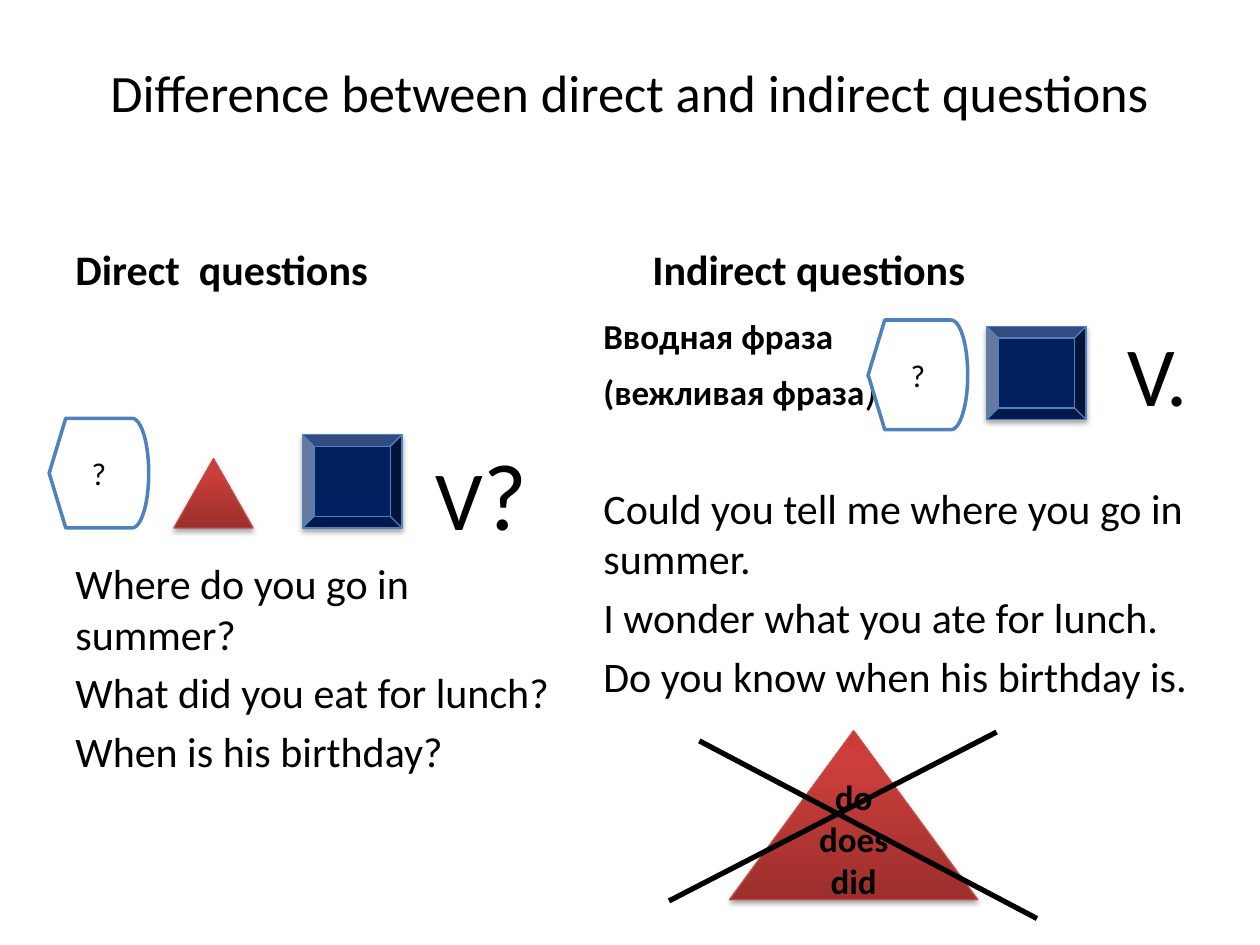
import pptx
import pptx.dml.color
import pptx.enum.shapes
import pptx.enum.text
import pptx.oxml
import pptx.oxml.ns
import pptx.util
from pptx.util import Inches

SHAPES = pptx.enum.shapes.MSO_SHAPE
ANCHOR = pptx.enum.text.MSO_ANCHOR
ALIGN = pptx.enum.text.PP_ALIGN
NAMESPACE = pptx.oxml.ns.nsdecls("a")
BLACK = "000000"
BLUE = "4F81BD"


def color(value):
    return pptx.dml.color.RGBColor.from_string(value)


def add_span(para, text, size, bold=False):
    span = para.add_run()
    span.text = text
    span.font.name = "Calibri"
    span.font.size = pptx.util.Pt(size)
    span.font.bold = bold
    span.font.color.rgb = color(BLACK)


def write_paragraphs(frame, paragraphs, align=ALIGN.LEFT, spacing=0.2):
    """Each paragraph is a list of (text, size, bold) spans; spacing is a share of the size."""
    for index, spans in enumerate(paragraphs):
        para = frame.add_paragraph() if index else frame.paragraphs[0]
        para.alignment = align
        para.space_before = pptx.util.Pt(spans[0][1] * spacing)
        for span in spans:
            add_span(para, *span)


def add_text(slide, left, top, width, height, paragraphs, anchor=ANCHOR.TOP):
    box = slide.shapes.add_textbox(Inches(left), Inches(top), Inches(width), Inches(height))
    frame = box.text_frame
    frame.word_wrap = True
    frame.vertical_anchor = anchor
    write_paragraphs(frame, paragraphs)
    return frame


def add_outlined_shape(slide, kind, left, top, width, height, line, line_width=0.75):
    shape = slide.shapes.add_shape(
        kind, Inches(left), Inches(top), Inches(width), Inches(height))
    shape.shadow.inherit = False
    shape.line.color.rgb = color(line)
    shape.line.width = pptx.util.Pt(line_width)
    return shape


def add_soft_shadow(shape):
    effects = shape.element.spPr.find(pptx.oxml.ns.qn("a:effectLst"))
    effects.append(pptx.oxml.parse_xml(
        f'<a:outerShdw {NAMESPACE} blurRad="40000" dist="23000" dir="5400000" rotWithShape="0">'
        f'<a:srgbClr val="{BLACK}"><a:alpha val="35000"/></a:srgbClr></a:outerShdw>'))


def add_question_word(slide, left, top):
    shape = add_outlined_shape(slide, SHAPES.FLOWCHART_DISPLAY, left, top, 0.79, 0.87, BLUE, 2)
    shape.fill.solid()
    shape.fill.fore_color.rgb = color("FFFFFF")
    shape.text_frame.vertical_anchor = ANCHOR.MIDDLE
    write_paragraphs(shape.text_frame, [[("?", 18)]], ALIGN.CENTER, 0)


def add_subject(slide, left, top):
    shape = add_outlined_shape(slide, SHAPES.BEVEL, left, top, 0.79, 0.74, BLUE)
    shape.fill.solid()
    shape.fill.fore_color.rgb = color("002060")
    add_soft_shadow(shape)


def add_auxiliary(slide, left, top, width, height):
    shape = add_outlined_shape(
        slide, SHAPES.ISOSCELES_TRIANGLE, left, top, width, height, "BF4C48")
    stops = "".join(
        f'<a:gs pos="{position * 1000}"><a:srgbClr val="{value}"/></a:gs>'
        for position, value in ((0, "9C2F2D"), (80, "CB3E3A"), (100, "CE3B37")))
    geometry = shape.element.spPr.find(pptx.oxml.ns.qn("a:prstGeom"))
    geometry.addnext(pptx.oxml.parse_xml(
        f'<a:gradFill {NAMESPACE} rotWithShape="1"><a:gsLst>{stops}</a:gsLst>'
        '<a:lin ang="16200000" scaled="0"/></a:gradFill>'))
    add_soft_shadow(shape)
    return shape


def add_stroke(slide, start, end):
    points = [Inches(value) for value in (*start, *end)]
    stroke = slide.shapes.add_connector(pptx.enum.shapes.MSO_CONNECTOR.STRAIGHT, *points)
    stroke.line.color.rgb = color(BLACK)
    stroke.line.width = pptx.util.Pt(3)
    stroke.element.spPr.append(pptx.oxml.parse_xml(f"<a:effectLst {NAMESPACE}/>"))


def add_title(slide, text):
    title = slide.shapes.title
    title.left, title.top = Inches(0.5), Inches(0.3)
    title.width, title.height = Inches(9), Inches(0.85)
    title.text_frame.vertical_anchor = ANCHOR.MIDDLE
    write_paragraphs(title.text_frame, [[(text, 30)]], ALIGN.CENTER, 0)


def add_direct_column(slide):
    add_text(slide, 0.5, 1.78, 3.71, 0.6, [[("Direct  questions", 24, True)]], ANCHOR.BOTTOM)
    frame = add_text(slide, 0.5, 2.38, 4.19, 4.32, [
        [("V", 48), ("?", 54)],
        [("Where do you go in summer?", 24)],
        [("What did you eat for lunch?", 24)],
        [("When is his birthday?", 24)],
    ])
    # Room above the text, and an indent that puts the verb after the symbols
    frame.margin_top = Inches(1.08)
    frame.margin_right = Inches(0.2)
    frame.paragraphs[0].space_before = pptx.util.Pt(0)
    properties = frame.paragraphs[0]._p.get_or_add_pPr()
    properties.set("marL", str(Inches(2.86)))
    properties.set("indent", "0")
    add_question_word(slide, 0.39, 3.32)
    add_auxiliary(slide, 1.38, 3.64, 0.63, 0.55)
    add_subject(slide, 2.4, 3.45)


def add_indirect_column(slide):
    add_text(slide, 5.08, 1.68, 4.42, 0.7, [[("Indirect questions", 24, True)]], ANCHOR.BOTTOM)
    frame = add_text(slide, 4.69, 2.45, 5.12, 4.76, [
        [("Вводная фраза", 20, True)],
        [("(вежливая фраза", 20, True), (")", 24)],
        [("Could you tell me where you go in summer.", 24)],
        [("I wonder what you ate for lunch.", 24)],
        [("Do you know when his birthday is.", 24)],
    ])
    frame.paragraphs[2].space_before = pptx.util.Pt(39)
    add_question_word(slide, 6.89, 2.54)
    add_subject(slide, 7.83, 2.59)
    add_text(slide, 8.85, 2.51, 0.94, 0.91, [[("V.", 48)]]).paragraphs[0].space_before = 0


def add_crossed_out_auxiliaries(slide):
    frame = add_auxiliary(slide, 5.79, 5.8, 1.97, 1.34).text_frame
    frame.vertical_anchor = ANCHOR.MIDDLE
    frame.margin_bottom = Inches(0.35)
    words = [[(word, 20, True)] for word in ("do", "does", "did")]
    write_paragraphs(frame, words, ALIGN.CENTER, 0)
    add_stroke(slide, (7.91, 5.81), (5.31, 7.15))
    add_stroke(slide, (5.55, 5.88), (8.23, 7.29))


def main():
    deck = pptx.Presentation()
    deck.slide_width, deck.slide_height = Inches(10), Inches(7.5)
    slide = deck.slides.add_slide(deck.slide_layouts.get_by_name("Title Only"))
    add_title(slide, "Difference between direct and indirect questions")
    add_direct_column(slide)
    add_indirect_column(slide)
    add_crossed_out_auxiliaries(slide)
    deck.save("out.pptx")


if __name__ == "__main__":
    main()
